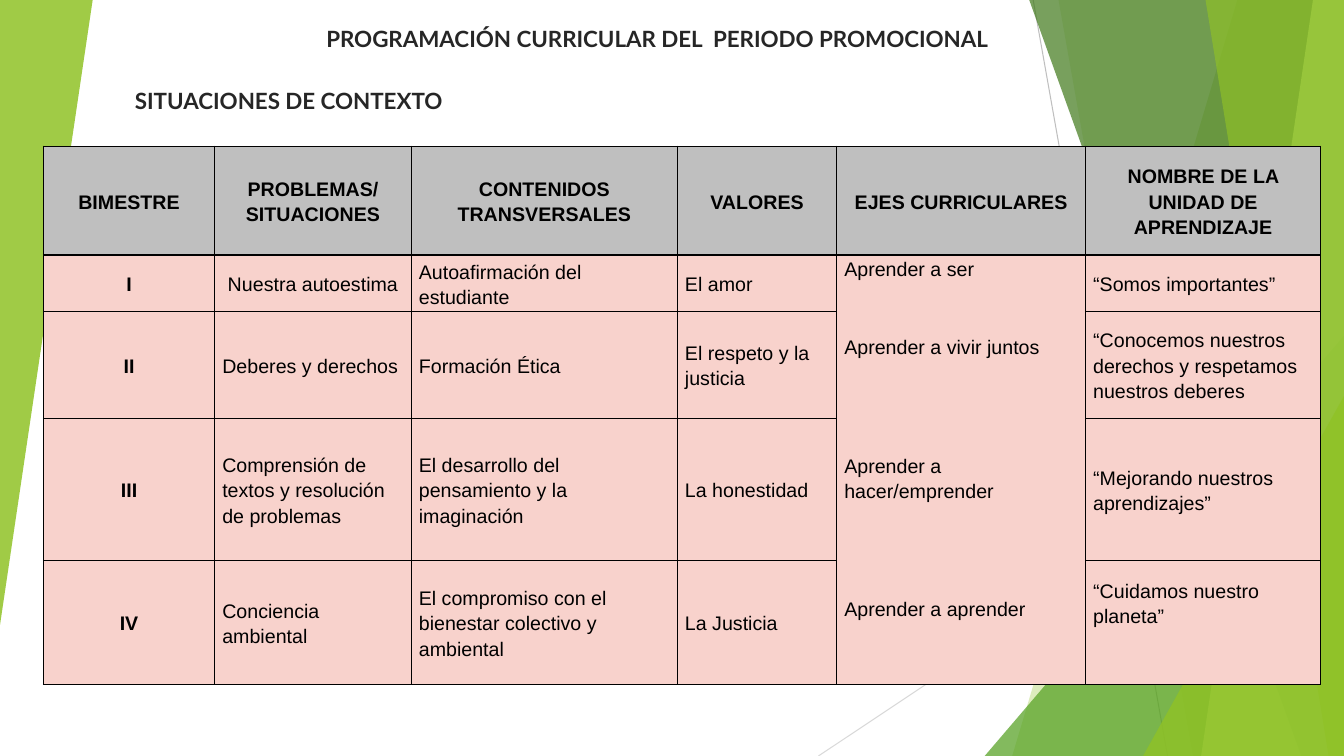
"""Build the slide with the curricular programme of the promotional period."""
from lxml import etree
from pptx import Presentation
from pptx.dml.color import RGBColor
from pptx.enum import shapes, text
from pptx.oxml import ns
from pptx.util import Pt

BLACK = RGBColor(0x00, 0x00, 0x00)
INK = RGBColor(0x26, 0x26, 0x26)
SILVER = RGBColor(0xBF, 0xBF, 0xBF)
PALE = RGBColor(0xD9, 0xD9, 0xD9)
ROSE = RGBColor(0xF8, 0xD2, 0xCC)
LIME = RGBColor(0x90, 0xC2, 0x26)
GREEN = RGBColor(0x54, 0xA0, 0x21)
FOREST = RGBColor(0x3F, 0x78, 0x19)
MINT = RGBColor(0xC0, 0xE4, 0x74)

WIDTH, HEIGHT = 960, 540
BLANK_LINE = 28.2
COLUMNS = [122.4, 140.4, 190.1, 113.8, 177.8, 167.8]
ROWS = [77.8, 40.3, 76.3, 101.5, 88.6]
AXES_COLUMN = 4
HEADERS = ["BIMESTRE", "PROBLEMAS/SITUACIONES", "CONTENIDOS TRANSVERSALES",
           "VALORES", "EJES CURRICULARES", "NOMBRE DE LA UNIDAD DE APRENDIZAJE"]
TERMS = [
    ["I", " Nuestra autoestima", "Autoafirmación del estudiante", "El amor",
     None, "“Somos importantes”"],
    ["II", "Deberes y derechos", "Formación Ética", "El respeto y la justicia",
     None, "“Conocemos nuestros derechos y respetamos nuestros deberes"],
    ["III", "Comprensión de textos y resolución de problemas",
     "El desarrollo del pensamiento y la imaginación", "La honestidad",
     None, "“Mejorando nuestros aprendizajes”"],
    ["IV", "Conciencia ambiental",
     "El compromiso con el bienestar colectivo y ambiental", "La Justicia",
     None, "“Cuidamos nuestro planeta”"],
]
AXES = [("Aprender a ser", 0), ("Aprender a vivir juntos", 1),
        ("Aprender a hacer/emprender", 2), ("Aprender a aprender", 2)]


def assign(target, values):
    """Set every attribute named in values on target."""
    for name, value in values.items():
        setattr(target, name, value)


def paint(shape, color, opacity):
    """Give a shape a translucent fill without line or shadow."""
    shape.shadow.inherit = False
    shape.line.fill.background()
    shape.fill.solid()
    shape.fill.fore_color.rgb = color
    tint = shape.fill._xPr.find(".//" + ns.qn("a:srgbClr"))
    etree.SubElement(tint, ns.qn("a:alpha"), val=str(opacity * 1000))


def add_ray(page, start, end, color):
    """Draw a thin straight line."""
    ray = page.shapes.add_connector(
        shapes.MSO_CONNECTOR.STRAIGHT, *map(Pt, start + end))
    ray.line.color.rgb = color
    ray.line.width = Pt(0.75)
    etree.SubElement(ray._element.spPr, ns.qn("a:effectLst"))


def add_band(page, top, bottom, color, opacity):
    """Draw a slanted band that reaches the right edge of the page."""
    builder = page.shapes.build_freeform(Pt(top), Pt(-0.6))
    corners = [(WIDTH, -0.6), (WIDTH, HEIGHT), (bottom, HEIGHT)]
    builder.add_line_segments([(Pt(x), Pt(y)) for x, y in corners])
    paint(builder.convert_to_shape(), color, opacity)


def add_wedge(page, frame, color, opacity, rotation=0):
    """Draw a right-angled triangle."""
    wedge = page.shapes.add_shape(
        shapes.MSO_SHAPE.ISOSCELES_TRIANGLE, *map(Pt, frame))
    wedge.adjustments[0] = 1
    wedge.rotation = rotation
    paint(wedge, color, opacity)


def write(para, words, **font):
    """Add one formatted run to a paragraph."""
    span = para.add_run()
    span.text = words
    span.font.color.rgb = font.pop("color")
    assign(span.font, font)


def add_heading(page, frame, words):
    """Add a centred bold heading."""
    box = page.shapes.add_textbox(*map(Pt, frame))
    box.text_frame.word_wrap = True
    para = box.text_frame.paragraphs[0]
    para.alignment = text.PP_ALIGN.CENTER
    write(para, words, name="Lato", size=Pt(16), bold=True, color=INK)


def add_borders(cell):
    """Draw a thin black line on the four sides of a cell."""
    properties = cell._tc.get_or_add_tcPr()
    for side in ("lnL", "lnR", "lnT", "lnB"):
        line = etree.SubElement(properties, ns.qn("a:" + side), w=str(Pt(1)))
        fill = etree.SubElement(line, ns.qn("a:solidFill"))
        etree.SubElement(fill, ns.qn("a:srgbClr"), val=str(BLACK))


def fill_cell(cell, entries, color, strong=False, anchor=text.MSO_ANCHOR.MIDDLE):
    """Write (words, blank lines above) entries into a cell and colour it."""
    cell.fill.solid()
    cell.fill.fore_color.rgb = color
    assign(cell, {"margin_left": Pt(5.4), "margin_right": Pt(5.4),
                  "margin_top": 0, "margin_bottom": 0,
                  "vertical_anchor": anchor})
    frame = cell.text_frame
    for index, (words, gap) in enumerate(entries):
        para = frame.add_paragraph() if index else frame.paragraphs[0]
        align = text.PP_ALIGN.CENTER if strong else text.PP_ALIGN.LEFT
        assign(para, {"alignment": align, "line_spacing": 1.15,
                      "space_before": Pt(gap * BLANK_LINE),
                      "space_after": Pt(10)})
        write(para, words, name="Arial", size=Pt(14), bold=strong, color=BLACK)


def add_programme(page):
    """Add the table of terms."""
    table = page.shapes.add_table(
        len(ROWS), len(COLUMNS), Pt(31), Pt(104.4),
        Pt(sum(COLUMNS)), Pt(sum(ROWS))).table
    assign(table, {"first_row": False, "horz_banding": False})
    for column, width in zip(table.columns, COLUMNS):
        column.width = Pt(width)
    for row, height in zip(table.rows, ROWS):
        row.height = Pt(height)
    for cell in table.iter_cells():
        add_borders(cell)
    axes = table.cell(1, AXES_COLUMN)
    axes.merge(table.cell(len(ROWS) - 1, AXES_COLUMN))
    for row, entries in enumerate([HEADERS] + TERMS):
        for column, words in enumerate(entries):
            if words is not None:
                fill_cell(table.cell(row, column), [(words, 0)],
                          ROSE if row else SILVER,
                          strong=row == 0 or column == 0)
    fill_cell(axes, AXES, ROSE, anchor=text.MSO_ANCHOR.TOP)
    table.cell(len(ROWS) - 1, len(COLUMNS) - 1).margin_bottom = Pt(BLANK_LINE)


def add_backdrop(page):
    """Draw the green facets along both edges."""
    add_ray(page, (738, 0), (834, HEIGHT), SILVER)
    add_ray(page, (WIDTH, 290), (584.6, HEIGHT), PALE)
    add_band(page, 884, 723, LIME, 30)
    add_band(page, 756, 852, LIME, 20)
    add_wedge(page, (703.4, 239.8, 256.6, 300.2), GREEN, 72)
    add_band(page, 735, 929.5, FOREST, 70)
    add_band(page, 938, 858, MINT, 70)
    add_band(page, 861, 949, LIME, 65)
    add_wedge(page, (816.5, 283, 143.5, 257), LIME, 80)
    add_wedge(page, (0, 0, 66.2, 446.4), LIME, 85, rotation=180)


def main():
    """Build and save the deck."""
    deck = Presentation()
    assign(deck, {"slide_width": Pt(WIDTH), "slide_height": Pt(HEIGHT)})
    page = deck.slides.add_slide(deck.slide_layouts[6])
    add_backdrop(page)
    add_heading(page, (38.2, 14.4, 866.2, 31.7),
                "PROGRAMACIÓN CURRICULAR DEL  PERIODO PROMOCIONAL ")
    add_programme(page)
    add_heading(page, (38.2, 59, 336.2, 31.7), "SITUACIONES DE CONTEXTO")
    deck.save("out.pptx")


if __name__ == "__main__":
    main()
